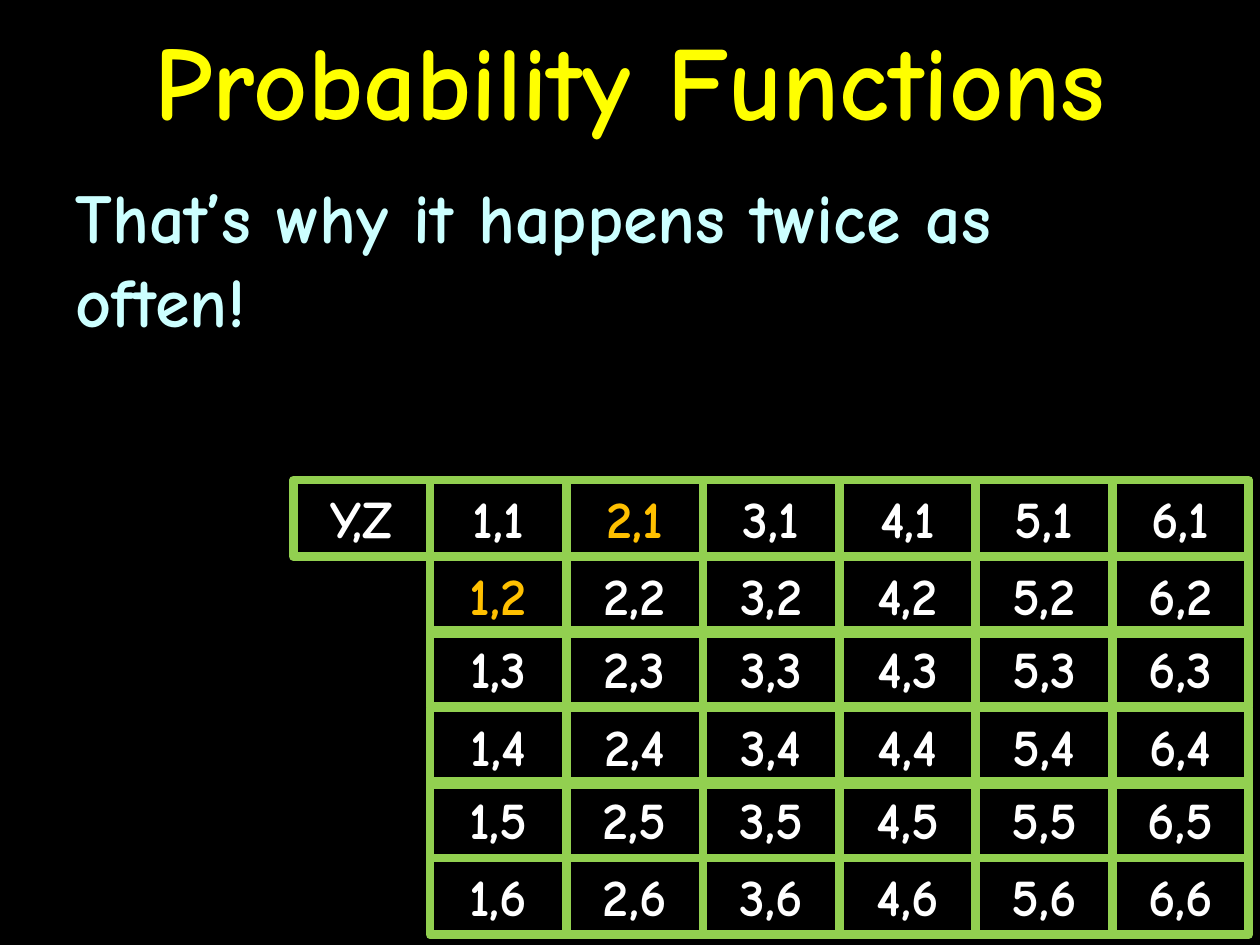
import dataclasses
import pptx
import pptx.dml.color
import pptx.enum.shapes
import pptx.enum.text
import pptx.util

Inches = pptx.util.Inches
Align = pptx.enum.text.PP_ALIGN
Anchor = pptx.enum.text.MSO_ANCHOR
Fit = pptx.enum.text.MSO_AUTO_SIZE

LEFT, WIDE, HIGH = 2.33, 1.083, 0.61
TOPS = [3.81, 4.42, 5, 5.62, 6.2, 6.81]
GOLD = {(2, 1), (1, 2)}


@dataclasses.dataclass
class Cell:
    col: int
    top: float
    text: str
    color: str = "FFFFFF"


def paint(color: str) -> pptx.dml.color.RGBColor:
    return pptx.dml.color.RGBColor.from_string(color)


def write(frame, text: str, size=30, color="FFFFFF", align=Align.CENTER,
          anchor=Anchor.TOP, fit=Fit.NONE, before=0) -> None:
    frame.word_wrap = True
    frame.auto_size = fit
    frame.vertical_anchor = anchor
    para = frame.paragraphs[0]
    para.alignment = align
    para.space_before = pptx.util.Pt(before)
    run = para.add_run()
    run.text = text
    run.font.name = "Comic Neue"
    run.font.size = pptx.util.Pt(size)
    run.font.bold = True
    run.font.color.rgb = paint(color)


def place(shape, left: float, top: float, width: float, height: float) -> None:
    shape.left, shape.top = Inches(left), Inches(top)
    shape.width, shape.height = Inches(width), Inches(height)


def draw(group, cell: Cell) -> None:
    box = group.shapes.add_shape(
        pptx.enum.shapes.MSO_SHAPE.RECTANGLE,
        Inches(LEFT + cell.col * WIDE), Inches(cell.top),
        Inches(WIDE), Inches(HIGH))
    box.shadow.inherit = False
    box.fill.background()
    box.line.color.rgb = paint("92D050")
    box.line.width = pptx.util.Pt(5)
    write(box.text_frame, cell.text, color=cell.color, fit=Fit.SHAPE_TO_FIT_TEXT)


def main() -> None:
    deck = pptx.Presentation()
    deck.slide_width, deck.slide_height = Inches(10), Inches(7.5)
    slide = deck.slides.add_slide(deck.slide_layouts[1])
    back = slide.background.fill
    back.solid()
    back.fore_color.rgb = paint("000000")

    title = slide.shapes.title
    place(title, 0, 0, 10, 1.25)
    write(title.text_frame, "Probability Functions", size=60, color="FFFF00",
          anchor=Anchor.MIDDLE)

    body = slide.placeholders[1]
    place(body, 0.5, 1.33, 9, 6.17)
    write(body.text_frame, "That’s why it happens twice as often!", size=40,
          color="CCFFFF", align=Align.LEFT, before=8)
    props = body.text_frame.paragraphs[0]._p.get_or_add_pPr()
    props.set("marL", "0")
    props.set("indent", "0")
    props.append(pptx.oxml.parse_xml(
        '<a:buNone xmlns:a="http://schemas.openxmlformats.org/drawingml/2006/main"/>'))

    cells = [Cell(0, TOPS[0], "Y,Z")]
    for z, top in enumerate(TOPS, 1):
        for y in range(1, 7):
            color = "FFC000" if (y, z) in GOLD else "FFFFFF"
            cells.append(Cell(y, top, f"{y},{z}", color))
    group = slide.shapes.add_group_shape()
    for cell in cells:
        draw(group, cell)

    deck.save("out.pptx")


if __name__ == "__main__":
    main()
